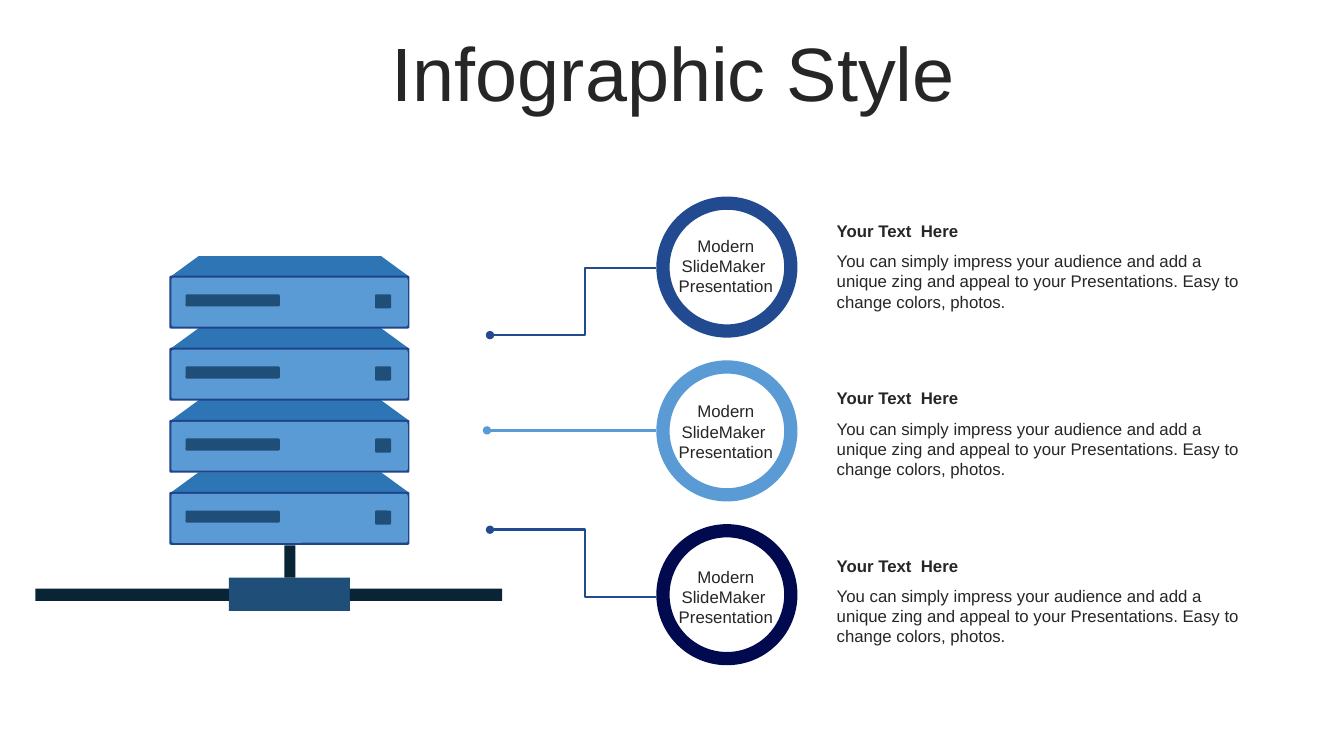
from dataclasses import dataclass

from lxml import etree
from pptx import Presentation
from pptx import util as u
from pptx.dml.color import RGBColor
from pptx.enum import shapes, text
from pptx.oxml import ns

INK = RGBColor(0x26, 0x26, 0x26)
ROYAL = RGBColor(0x22, 0x4A, 0x90)
SKY = RGBColor(0x5A, 0x9B, 0xD5)
NAVY = RGBColor(0x01, 0x0A, 0x4F)
LID = RGBColor(0x2E, 0x75, 0xB5)
FRAME = RGBColor(0x1E, 0x45, 0x8A)
STEEL = RGBColor(0x1F, 0x4E, 0x79)
CABLE = RGBColor(0x09, 0x24, 0x35)

CELL = 0.1  # grid pitch in inches, for both columns and rows
KIND = shapes.MSO_SHAPE
BLOCK = KIND.RECTANGLE
ROUND = KIND.ROUNDED_RECTANGLE
LABEL = "Modern SlideMaker  Presentation"
HEAD = "Your Text  Here"
BODY = ("You can simply impress your audience and add a unique zing and appeal "
        "to your Presentations. Easy to change colors, photos.")


@dataclass(frozen=True)
class Part:
    """A filled shape; lengths are columns and rows of the grid."""
    kind: shapes.MSO_SHAPE
    col: float
    row: float
    wide: float
    high: float
    color: RGBColor
    adj: float | None = None


@dataclass(frozen=True)
class Topic:
    """A ring with the line that leads to it."""
    ring: RGBColor
    line: RGBColor
    dot: tuple[float, float]
    end: float


# Network base
BASE = [
    Part(BLOCK, 22.7, 57.3, 12, 3.3, STEEL),
    Part(BLOCK, 3.5, 58.4, 19.2, 1.2, CABLE),
    Part(BLOCK, 34.7, 58.4, 15.1, 1.2, CABLE),
    Part(BLOCK, 28.2, 54.1, 1.1, 3.2, CABLE),
]

# One server, rows counted from its top
SERVER = [
    Part(KIND.TRAPEZOID, 16.9, 0, 23.7, 2.05, LID, 1.37),
    Part(ROUND, 16.8, 1.95, 23.8, 5.25, FRAME, 0.03),
    Part(ROUND, 17, 2.15, 23.45, 4.85, SKY, 0.04),
    Part(ROUND, 18.4, 3.8, 9.35, 1.2, STEEL, 0.12),
    Part(ROUND, 37.2, 3.8, 1.6, 1.4, STEEL, 0.1),
]
COUNT, TOP, STEP = 4, 25.4, 7.15

TOPICS = [
    Topic(ROYAL, ROYAL, (48.6, 33.25), 26.6),
    Topic(SKY, SKY, (48.3, 42.7), 42.7),
    Topic(NAVY, ROYAL, (48.6, 52.55), 59.2),
]


def cells(count: float) -> u.Length:
    return u.Inches(count * CELL)


def style(par, size: float, bold: bool = False) -> None:
    font = par.font
    font.name, font.size, font.bold = "Arial", u.Pt(size), bold
    font.color.rgb = INK


def draw(slide, part: Part, drop: float = 0) -> None:
    box = slide.shapes.add_shape(part.kind, cells(part.col), cells(part.row + drop),
                                 cells(part.wide), cells(part.high))
    box.shadow.inherit = False
    box.fill.solid()
    box.fill.fore_color.rgb = part.color
    box.line.fill.background()
    if part.adj is not None:
        box.adjustments[0] = part.adj


def write(slide, words: str, col: float, row: float, wide: float, high: float,
          align: text.PP_ALIGN = text.PP_ALIGN.LEFT, bold: bool = False) -> None:
    box = slide.shapes.add_textbox(cells(col), cells(row), cells(wide), cells(high))
    box.text_frame.word_wrap = True
    par = box.text_frame.paragraphs[0]
    par.text, par.alignment = words, align
    style(par, 12, bold)


def link(slide, topic: Topic) -> None:
    flat = topic.dot[1] == topic.end
    kind = shapes.MSO_CONNECTOR.STRAIGHT if flat else shapes.MSO_CONNECTOR.ELBOW
    line = slide.shapes.add_connector(kind, cells(topic.dot[0]), cells(topic.dot[1]),
                                      cells(65.1), cells(topic.end))
    line.line.color.rgb = topic.line
    line.line.width = u.Pt(1.75)
    props = line._element.spPr
    etree.SubElement(props.find(ns.qn("a:ln")), ns.qn("a:headEnd"), type="oval")
    etree.SubElement(props, ns.qn("a:effectLst"))
    if not flat:  # place the bend
        geom = props.find(ns.qn("a:prstGeom"))
        bend = geom.find(ns.qn("a:avLst"))
        if bend is None:
            bend = etree.SubElement(geom, ns.qn("a:avLst"))
        etree.SubElement(bend, ns.qn("a:gd"), name="adj1", fmla="val 57100")


def main() -> None:
    deck = Presentation()
    deck.slide_width, deck.slide_height = u.Inches(13.33), u.Inches(7.5)
    slide = deck.slides.add_slide(deck.slide_layouts[5])

    # Title
    title = slide.shapes.title
    title.left, title.top = cells(3.5), cells(3.7)
    title.width, title.height = cells(126.6), cells(7.9)
    frame = title.text_frame
    frame.text = "Infographic Style"
    frame.auto_size = text.MSO_AUTO_SIZE.NONE
    frame.vertical_anchor = text.MSO_ANCHOR.MIDDLE
    par = frame.paragraphs[0]
    par.alignment = text.PP_ALIGN.CENTER
    par.line_spacing, par.space_before = 0.9, u.Pt(10)
    style(par, 54)

    # Server stack
    for part in BASE:
        draw(slide, part)
    for part in SERVER:
        for level in range(COUNT):
            draw(slide, part, TOP + level * STEP)

    # Topics: line, ring, label and text
    for i, topic in enumerate(TOPICS):
        link(slide, topic)
        draw(slide, Part(KIND.DONUT, 65.1, 19.5 + 16.25 * i, 14, 14, topic.ring, 0.094))
        write(slide, LABEL, 66.3, 22.9 + 16.4 * i, 11.4, 7.1, text.PP_ALIGN.CENTER)
        top = 21.4 + 16.6 * i
        write(slide, HEAD, 82, top, 42.9, 3, bold=True)
        write(slide, BODY, 82, top + 3, 42.9, 7.1)

    deck.save("out.pptx")


if __name__ == "__main__":
    main()
